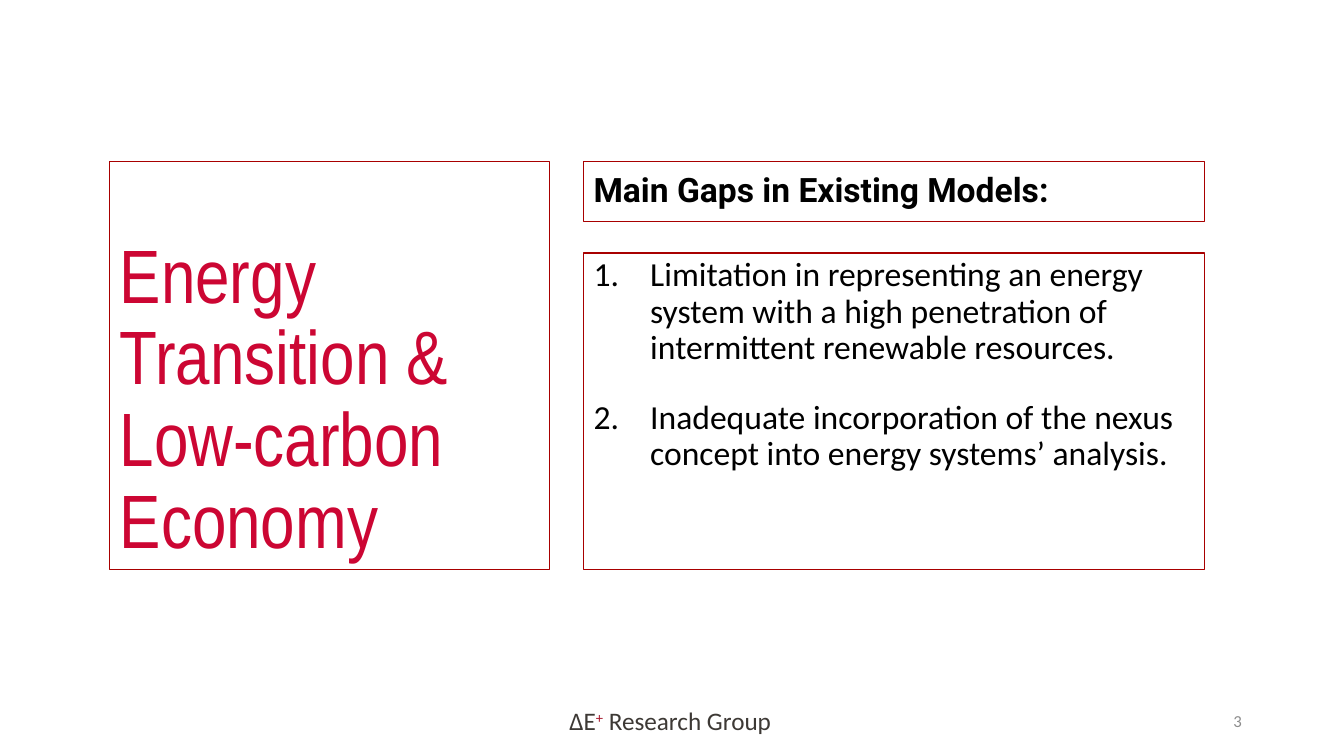
"""Build the slide on gaps in existing energy models."""
from lxml.etree import SubElement
from pptx import Presentation
from pptx.dml.color import RGBColor
from pptx.enum.text import MSO_ANCHOR as Anchor, PP_ALIGN as Align
from pptx.oxml.ns import qn
from pptx.util import Pt

WHITE = RGBColor(0xFF, 0xFF, 0xFF)
BLACK = RGBColor(0x00, 0x00, 0x00)
BORDER_RED = RGBColor(0xA8, 0x00, 0x00)
TITLE_RED = RGBColor(0xCC, 0x06, 0x33)
PLUS_RED = RGBColor(0xA6, 0x19, 0x2E)
FOOTER_GREY = RGBColor(0x3D, 0x39, 0x35)
NUMBER_GREY = RGBColor(0x8C, 0x8C, 0x8C)

TOP, BOTTOM = 115.2, 406.8
RIGHT_COLUMN, RIGHT_WIDTH = 416.9, 443.5
LIST_TOP = 180.7
FOOTER_TOP, FOOTER_HEIGHT = 500.4, 28.8

GAPS = [
    "Limitation in representing an energy system with a high penetration of "
    "intermittent renewable resources.",
    "Inadequate incorporation of the nexus concept into energy systems’ analysis.",
]


def add_box(page, left, top, width, height, anchor=Anchor.TOP, border=None, fill=None):
    """Add a wrapping text box with an optional border width and fill."""
    box = page.shapes.add_textbox(Pt(left), Pt(top), Pt(width), Pt(height))
    box.text_frame.word_wrap = True
    box.text_frame.vertical_anchor = anchor
    if border:
        box.line.color.rgb = BORDER_RED
        box.line.width = Pt(border)
    if fill is not None:
        box.fill.solid()
        box.fill.fore_color.rgb = fill
    return box


def style(para, font, size, color, bold=False):
    """Set the font that all runs of a paragraph share."""
    para.font.name = font
    para.font.size = Pt(size)
    para.font.bold = bold
    para.font.color.rgb = color


def write(box, text, font, size, color, bold=False, spacing=None, align=Align.LEFT):
    """Write one styled paragraph into a box."""
    para = box.text_frame.paragraphs[0]
    para.text = text
    para.alignment = align
    if spacing:
        para.line_spacing = spacing
    style(para, font, size, color, bold)


def write_numbered(box, items):
    """Write a numbered list with hanging indents."""
    frame = box.text_frame
    for index, item in enumerate(items):
        para = frame.add_paragraph() if index else frame.paragraphs[0]
        para.text = item
        properties = para._p.get_or_add_pPr()
        properties.set("marL", str(Pt(40.5)))
        properties.set("indent", str(-Pt(40.5)))
        SubElement(properties, qn("a:buFont"), typeface="+mj-lt")
        SubElement(properties, qn("a:buAutoNum"), type="arabicPeriod")
        para.line_spacing = 0.9
        para.space_before = Pt(12 if index else 0)
        para.space_after = Pt(12)
        style(para, "Calibri", 24, BLACK)


def write_group_name(box):
    """Write the group name with its raised red plus sign."""
    box.text_frame.word_wrap = False
    para = box.text_frame.paragraphs[0]
    for text, color, baseline in (
        ("ΔE", FOOTER_GREY, 0),
        ("+", PLUS_RED, 30000),
        ("\u00a0Research Group".replace("\u00a0", " "), FOOTER_GREY, 0),
    ):
        span = para.add_run()
        span.text = text
        span.font.color.rgb = color
        if baseline:
            span.font._element.set("baseline", str(baseline))
    para.font.name = "Calibri"
    para.font.size = Pt(18)


def main():
    """Build and save the deck."""
    deck = Presentation()
    deck.slide_width, deck.slide_height = Pt(960), Pt(540)
    page = deck.slides.add_slide(deck.slide_layouts[6])

    write_group_name(add_box(page, 399.6, FOOTER_TOP, 161.3, FOOTER_HEIGHT, fill=WHITE))

    title = add_box(page, 78.5, TOP, 313.9, BOTTOM - TOP, Anchor.BOTTOM, 0.75)
    write(title, "Energy Transition & Low-carbon Economy", "Arial Narrow", 54,
          TITLE_RED, spacing=0.9)

    gaps = add_box(page, RIGHT_COLUMN, LIST_TOP, RIGHT_WIDTH, BOTTOM - LIST_TOP,
                   border=1, fill=WHITE)
    write_numbered(gaps, GAPS)

    number = add_box(page, 678.2, FOOTER_TOP, 216, FOOTER_HEIGHT, Anchor.MIDDLE)
    write(number, "3", "Calibri", 12, NUMBER_GREY, align=Align.RIGHT)

    heading = add_box(page, RIGHT_COLUMN, TOP, RIGHT_WIDTH, 43.2, Anchor.MIDDLE, 0.75)
    write(heading, "Main Gaps in Existing Models:", "Roboto", 24, BLACK, True, 0.9)

    deck.save("out.pptx")


if __name__ == "__main__":
    main()
